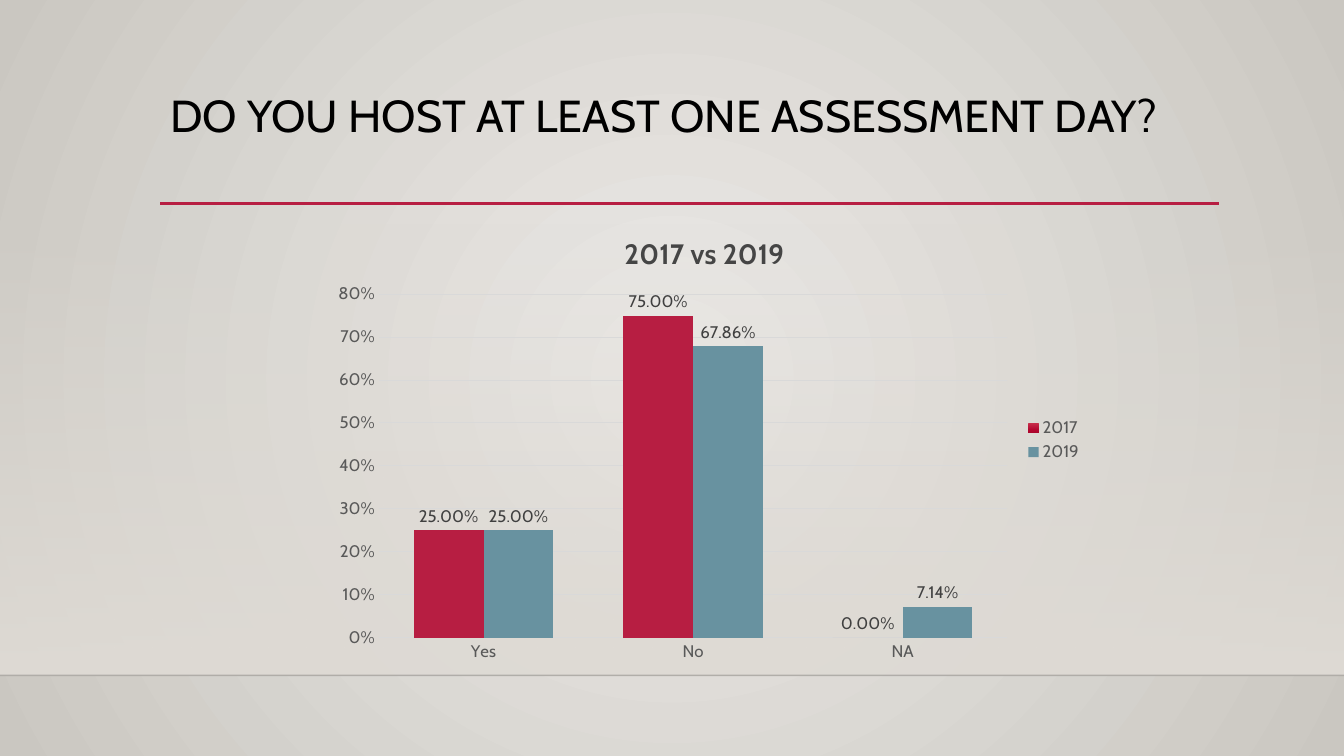
from lxml.etree import SubElement
from pptx import Presentation
from pptx.chart.data import CategoryChartData
from pptx.dml.color import RGBColor
from pptx.enum.chart import XL_CHART_TYPE as ChartType, XL_LABEL_POSITION as LabelPos
from pptx.enum.chart import XL_LEGEND_POSITION as LegendPos, XL_TICK_MARK as Tick
from pptx.enum.shapes import MSO_CONNECTOR as Connector, MSO_SHAPE as Shape
from pptx.oxml.ns import qn
from pptx.util import Cm, Pt

FONT = "Cabin"
BLACK = RGBColor(0x00, 0x00, 0x00)
RED = RGBColor(0xB7, 0x1E, 0x42)
TEAL = RGBColor(0x68, 0x92, 0xA0)
STONE = RGBColor(0xCC, 0xC6, 0xBC)
SAND = RGBColor(0xDF, 0xDB, 0xD5)
GLOW = RGBColor(0xEC, 0xEA, 0xE7)
EDGE = RGBColor(0xCA, 0xC7, 0xC1)
GRID = RGBColor(0xD9, 0xD9, 0xD9)
AXIS_TEXT = RGBColor(0x59, 0x59, 0x59)
LABEL_TEXT = RGBColor(0x40, 0x40, 0x40)
HEADING = RGBColor(0x45, 0x45, 0x45)
KEY_STOPS = [
    (0, RGBColor(0xC7, 0x30, 0x4C), 100),
    (69, RGBColor(0xB3, 0x06, 0x2F), 100),
    (100, RGBColor(0xAA, 0x06, 0x2C), 100),
]


def set_alpha(clr, percent):
    SubElement(clr, qn("a:alpha"), val=str(percent * 1000))


def set_gradient(fill, owner, stops, circle=False):
    fill.gradient()
    fill.gradient_angle = 270
    grad = next(owner.iter(qn("a:gradFill")))
    gs_list = grad.find(qn("a:gsLst"))
    for gs in list(gs_list):
        gs_list.remove(gs)
    for pos, color, alpha in stops:
        gs = SubElement(gs_list, qn("a:gs"), pos=str(pos * 1000))
        clr = SubElement(gs, qn("a:srgbClr"), val=str(color))
        if alpha < 100:
            set_alpha(clr, alpha)
    if circle:
        grad.remove(grad.find(qn("a:lin")))
        ring = SubElement(grad, qn("a:path"), path="circle")
        SubElement(ring, qn("a:fillToRect"), l="50000", t="50000", r="50000", b="50000")


def set_layout(parent, index, **values):
    for old in parent.findall(qn("c:layout")):
        parent.remove(old)
    layout = parent.makeelement(qn("c:layout"))
    parent.insert(index, layout)
    manual = SubElement(layout, qn("c:manualLayout"))
    if "w" in values:
        SubElement(manual, qn("c:layoutTarget"), val="inner")
    for mode in ("xMode", "yMode"):
        SubElement(manual, qn("c:" + mode), val="edge")
    for name, value in values.items():
        SubElement(manual, qn("c:" + name), val=str(value))


def set_font(font, size, color, bold=False):
    font.name = FONT
    font.size = Pt(size)
    font.color.rgb = color
    font.bold = bold


def add_line(s, x1, x2, y, color, width, alpha=100):
    line = s.shapes.add_connector(Connector.STRAIGHT, Cm(x1), Cm(y), Cm(x2), Cm(y))
    line.line.color.rgb = color
    line.line.width = Pt(width)
    sp_pr = line._element.spPr
    if alpha < 100:
        set_alpha(next(sp_pr.iter(qn("a:srgbClr"))), alpha)
    SubElement(sp_pr, qn("a:effectLst"))


def add_backdrop(s):
    set_gradient(s.background.fill, s._element, [(0, GLOW, 100), (100, EDGE, 100)], circle=True)
    sp = s.shapes.add_shape(Shape.RECTANGLE, 0, Cm(5.61), Cm(33.87), Cm(11.41))
    sp.shadow.inherit = False
    sp.line.fill.background()
    set_gradient(sp.fill, sp._element, [(0, SAND, 0), (100, SAND, 100)])
    add_line(s, 0, 33.87, 17.02, BLACK, 1, alpha=20)


def add_title(s, text):
    tf = s.shapes.add_textbox(Cm(4.04), Cm(2.24), Cm(26.67), Cm(2.92)).text_frame
    tf.word_wrap = True
    p = tf.paragraphs[0]
    p.text = text
    p.line_spacing = 0.9
    set_font(p.font, 32, BLACK)


def style_axes(chart):
    cat, val = chart.category_axis, chart.value_axis
    for axis in (cat, val):
        set_font(axis.tick_labels.font, 12, AXIS_TEXT)
        axis.major_tick_mark = axis.minor_tick_mark = Tick.NONE
    cat.format.line.color.rgb = GRID
    cat.format.line.width = Pt(1)
    val.format.line.fill.background()
    val.major_gridlines.format.line.color.rgb = GRID
    val.major_gridlines.format.line.width = Pt(0.75)
    val.minimum_scale, val.maximum_scale, val.major_unit = 0, 0.8, 0.1
    val.tick_labels.number_format = "0%"
    val.tick_labels.number_format_is_linked = False


def style_series(plot):
    plot.gap_width = 100
    plot.overlap = 0
    plot.vary_by_categories = False
    first, second = plot.series
    set_gradient(first.format.fill, first._element, KEY_STOPS)
    for i, color in enumerate((RED, RED, STONE)):
        fill = first.points[i].format.fill
        fill.solid()
        fill.fore_color.rgb = color
    second.format.fill.solid()
    second.format.fill.fore_color.rgb = TEAL
    for series in plot.series:
        labels = series.data_labels
        labels.show_value = True
        labels.position = LabelPos.OUTSIDE_END
        labels.number_format = "0.00%"
        labels.number_format_is_linked = False
        set_font(labels.font, 12, LABEL_TEXT)


def add_column_chart(s, title, categories, values):
    data = CategoryChartData(number_format="0.00%")
    data.categories = categories
    for name, numbers in values.items():
        data.add_series(name, numbers)
    chart = s.shapes.add_chart(
        ChartType.COLUMN_CLUSTERED, Cm(7.98), Cm(5.16), Cm(19.56), Cm(11.86), data
    ).chart
    set_font(chart.font, 10, BLACK)
    p = chart.chart_title.text_frame.paragraphs[0]
    p.text = title
    set_font(p.font, 20, HEADING, bold=True)
    set_layout(chart.chart_title._element, 1, x=0.39, y=0.05)
    chart.has_legend = True
    chart.legend.position = LegendPos.RIGHT
    chart.legend.include_in_layout = False
    set_font(chart.legend.font, 12, AXIS_TEXT)
    style_axes(chart)
    style_series(chart.plots[0])
    plot_area = next(chart._chartSpace.iter(qn("c:plotArea")))
    set_layout(plot_area, 0, x=0.08, y=0.19, w=0.81, h=0.73)


def main():
    prs = Presentation()
    prs.slide_width, prs.slide_height = Cm(33.87), Cm(19.05)
    s = prs.slides.add_slide(prs.slide_layouts[6])
    add_backdrop(s)
    add_line(s, 4.04, 30.73, 5.13, RED, 2.5)
    add_title(s, "DO YOU HOST AT LEAST ONE ASSESSMENT DAY?")
    add_column_chart(
        s,
        "2017 vs 2019",
        ["Yes", "No", "NA"],
        {"2017": [0.25, 0.75, 0], "2019": [0.25, 0.6786, 0.0714]},
    )
    prs.save("out.pptx")


if __name__ == "__main__":
    main()
